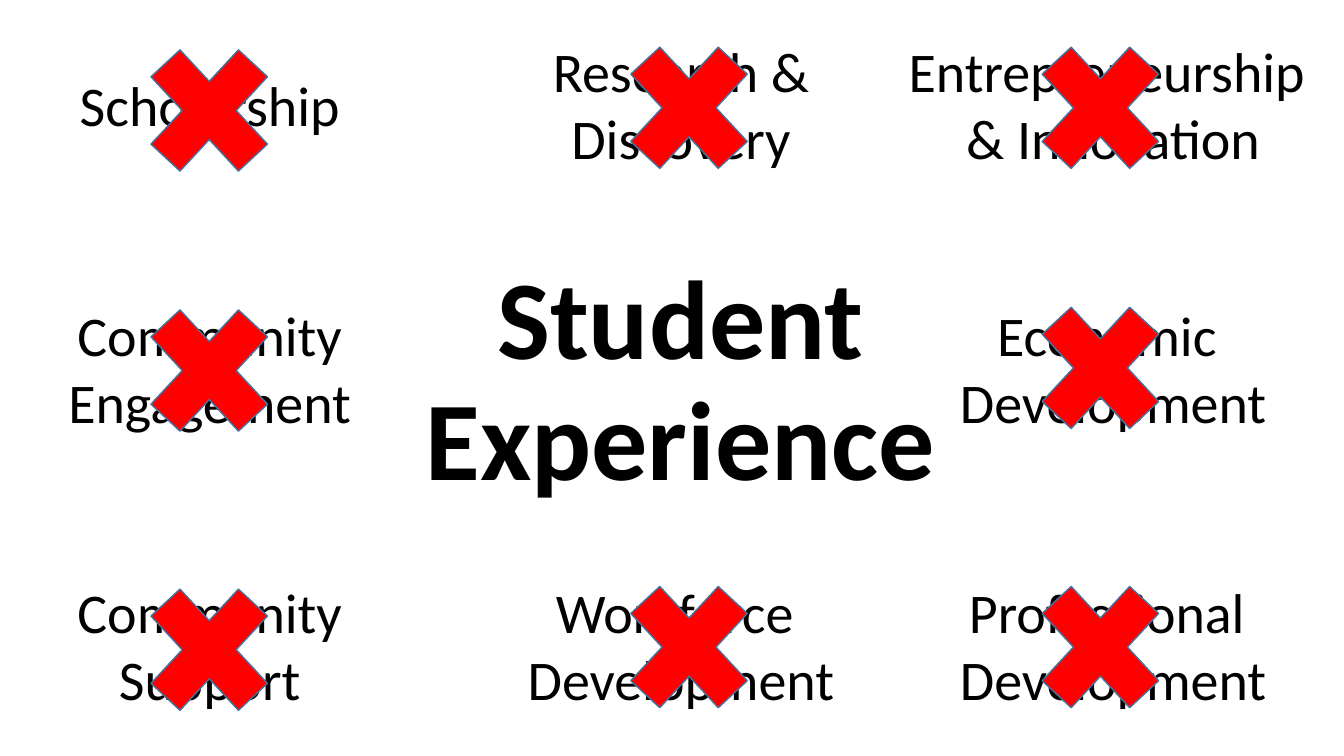
from pptx import Presentation
from pptx import util as u
from pptx.dml.color import RGBColor
from pptx.enum import shapes, text

BLACK = RGBColor(0x00, 0x00, 0x00)
RED = RGBColor(0xFF, 0x00, 0x00)
STEEL_BLUE = RGBColor(0x43, 0x73, 0x9E)

# Centres in percent of the slide's width (columns) and height (rows)
LABEL_COLUMNS = (15.6, 50.67, 82.82)
LABEL_ROWS = (13.8, 48.73, 85.4)
CROSS_COLUMNS = (15.57, 51.27, 81.88)
CROSS_ROWS = (14.27, 48.67, 85.6)
CROSS_DROPS = (0.35, 0, 0)
CROSS_SIZE = (12.53, 24)
LABEL_HEIGHTS = {1: 10.27, 2: 19.33}

# (column, row, width in percent, lines)
LABELS = (
    (0, 0, 21.08, ("Scholarship",)),
    (1, 0, 20.78, ("Research &", "Discovery")),
    (2, 0, 32.26, ("Entrepreneurship ", "& Innovation")),
    (0, 1, 22.81, ("Community", "Engagement")),
    (2, 1, 24.53, ("Economic ", "Development")),
    (0, 2, 21.38, ("Community", "Support")),
    (1, 2, 24.53, ("Workforce ", "Development")),
    (2, 2, 24.53, ("Professional ", "Development")),
)


def write_text(frame, lines, size=40, bold=False, line_spacing=None):
    for index, line in enumerate(lines):
        paragraph = frame.paragraphs[0] if index == 0 else frame.add_paragraph()
        paragraph.text = line
        paragraph.alignment = text.PP_ALIGN.CENTER
        paragraph.line_spacing = line_spacing
        for run in paragraph.runs:
            run.font.name = "Calibri"
            run.font.size = u.Pt(size)
            run.font.bold = bold
            run.font.color.rgb = BLACK


class StrategySlide:
    def __init__(self, presentation):
        self.slide_width = presentation.slide_width
        self.slide_height = presentation.slide_height
        self.slide = presentation.slides.add_slide(presentation.slide_layouts[0])
        subtitle = self.slide.placeholders[1].element
        subtitle.getparent().remove(subtitle)

    def box(self, center_x, center_y, width, height):
        """Turn a centre and size in percent into left, top, width, height."""
        across, down = self.slide_width / 100, self.slide_height / 100
        return (
            round((center_x - width / 2) * across),
            round((center_y - height / 2) * down),
            round(width * across),
            round(height * down),
        )

    def title(self, wording, center_x, center_y, width, height):
        title = self.slide.shapes.title
        title.left, title.top, title.width, title.height = self.box(
            center_x, center_y, width, height)
        frame = title.text_frame
        frame.auto_size = text.MSO_AUTO_SIZE.NONE
        frame.vertical_anchor = text.MSO_ANCHOR.BOTTOM
        write_text(frame, [wording], size=80, bold=True, line_spacing=0.9)

    def label(self, column, row, width, lines):
        shape = self.slide.shapes.add_textbox(*self.box(
            LABEL_COLUMNS[column], LABEL_ROWS[row], width, LABEL_HEIGHTS[len(lines)]))
        frame = shape.text_frame
        frame.word_wrap = False
        frame.auto_size = text.MSO_AUTO_SIZE.SHAPE_TO_FIT_TEXT
        write_text(frame, lines)

    def cross(self, column, row):
        shape = self.slide.shapes.add_shape(
            shapes.MSO_SHAPE.MATH_MULTIPLY,
            *self.box(CROSS_COLUMNS[column], CROSS_ROWS[row] + CROSS_DROPS[column], *CROSS_SIZE))
        shape.shadow.inherit = False
        shape.fill.solid()
        shape.fill.fore_color.rgb = RED
        shape.line.color.rgb = STEEL_BLUE
        shape.line.width = u.Pt(1)


def main():
    presentation = Presentation()
    presentation.slide_width = u.Inches(13.33)
    presentation.slide_height = u.Inches(7.5)
    strategy = StrategySlide(presentation)
    strategy.title("Student\vExperience", 50.64, 48.67, 75.02, 37.6)
    for label in LABELS:
        strategy.label(*label)
    for column, row, _, _ in LABELS:
        strategy.cross(column, row)
    presentation.save("out.pptx")


if __name__ == "__main__":
    main()
